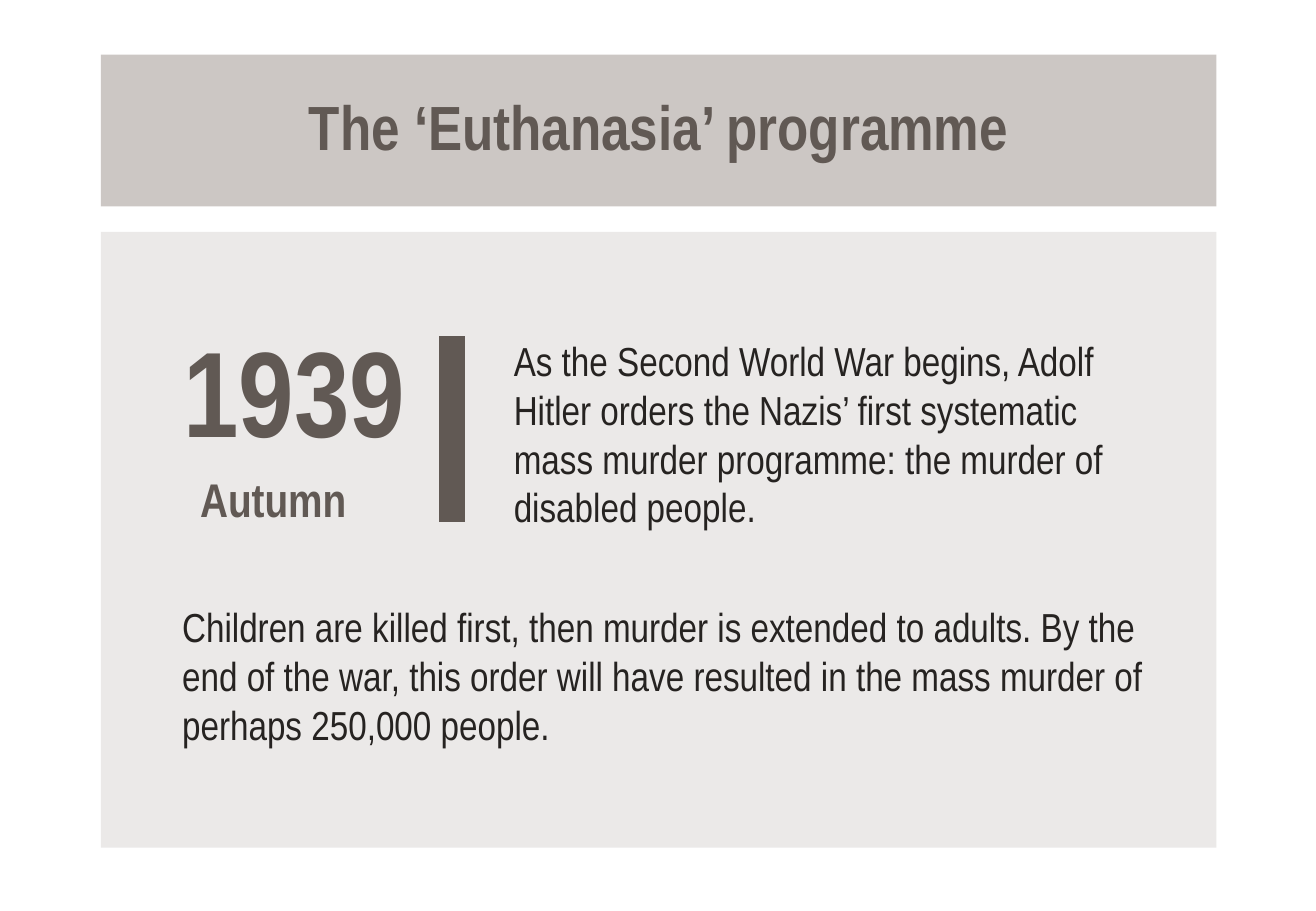
from dataclasses import dataclass

from lxml import etree
from pptx import Presentation
from pptx.dml.color import RGBColor
from pptx.enum.shapes import MSO_CONNECTOR, MSO_SHAPE
from pptx.enum.text import MSO_ANCHOR, PP_ALIGN
from pptx.oxml.ns import qn
from pptx.util import Emu, Pt

RECT = MSO_SHAPE.RECTANGLE
STRAIGHT = MSO_CONNECTOR.STRAIGHT
TOP, MIDDLE = MSO_ANCHOR.TOP, MSO_ANCHOR.MIDDLE
LEFT, CENTER = PP_ALIGN.LEFT, PP_ALIGN.CENTER
PX = 9144


@dataclass(frozen=True)
class Theme:
    font: str = "Arial Narrow"
    panel: str = "EBE9E8"
    banner: str = "CCC7C4"
    accent: str = "615954"
    ink: str = "262321"
    title: int = 37
    body: int = 24
    year: int = 72
    gap: int = 44
    season: int = 28
    rule: int = 15


class Deck:
    def __init__(self, prs, theme):
        self.theme = theme
        self.s = prs.slides.add_slide(prs.slide_layouts[6])

    def rect(self, box, color):
        sp = self.s.shapes.add_shape(RECT, *(Emu(v * PX) for v in box))
        sp.shadow.inherit = False
        sp.fill.solid()
        sp.fill.fore_color.rgb = RGBColor.from_string(color)
        sp.line.fill.background()
        return sp

    def line(self, x1, y1, x2, y2, color, width):
        ln = self.s.shapes.add_connector(STRAIGHT, *(Emu(v * PX) for v in (x1, y1, x2, y2)))
        ln.line.color.rgb = RGBColor.from_string(color)
        ln.line.width = Pt(width)
        etree.SubElement(ln._element.spPr, qn("a:effectLst"))

    def text(self, box, lines, anchor=TOP, spacing=1.0):
        sp = self.s.shapes.add_textbox(*(Emu(v * PX) for v in box))
        self.fill_text(sp, lines, anchor, LEFT, spacing)

    def fill_text(self, sp, lines, anchor, align, spacing):
        tf = sp.text_frame
        tf.word_wrap = True
        tf.vertical_anchor = anchor
        p = tf.paragraphs[0]
        p.alignment = align
        p.line_spacing = spacing
        for i, runs in enumerate(lines):
            if i:
                p.add_line_break()
            for text, size, color, bold in runs:
                r = p.add_run()
                r.text = text
                r.font.name = self.theme.font
                r.font.size = Pt(size)
                r.font.bold = bold
                r.font.color.rgb = RGBColor.from_string(color)


def main():
    prs = Presentation()
    prs.slide_width, prs.slide_height = Emu(1083 * PX), Emu(750 * PX)
    t = Theme()
    deck = Deck(prs, t)

    deck.rect((83, 191, 918, 507), t.panel)
    banner = deck.rect((83, 45, 918, 125), t.banner)
    title = [("The ‘Euthanasia’ programme", t.title, t.accent, True)]
    deck.fill_text(banner, [title], MIDDLE, CENTER, 0.9)

    deck.line(372, 277, 372, 430, t.accent, t.rule)
    date = [
        [("1939", t.year, t.accent, True)],
        [(" ", t.gap, t.ink, True), ("Autumn", t.season, t.accent, True)],
    ]
    deck.text((141, 243, 267, 235), date, MIDDLE, 0.8)

    order = (
        "As the Second World War begins, Adolf Hitler orders the Nazis’ first "
        "systematic mass murder programme: the murder of disabled people."
    )
    outcome = (
        "Children are killed first, then murder is extended to adults. By the end of the war, "
        "this order will have resulted in the mass murder of perhaps 250,000 people."
    )
    for box, passage, anchor in (
        ((413, 263, 546, 188), order, MIDDLE),
        ((140, 491, 819, 131), outcome, TOP),
    ):
        deck.text(box, [[(passage, t.body, t.ink, False)]], anchor)

    prs.save("out.pptx")


if __name__ == "__main__":
    main()
